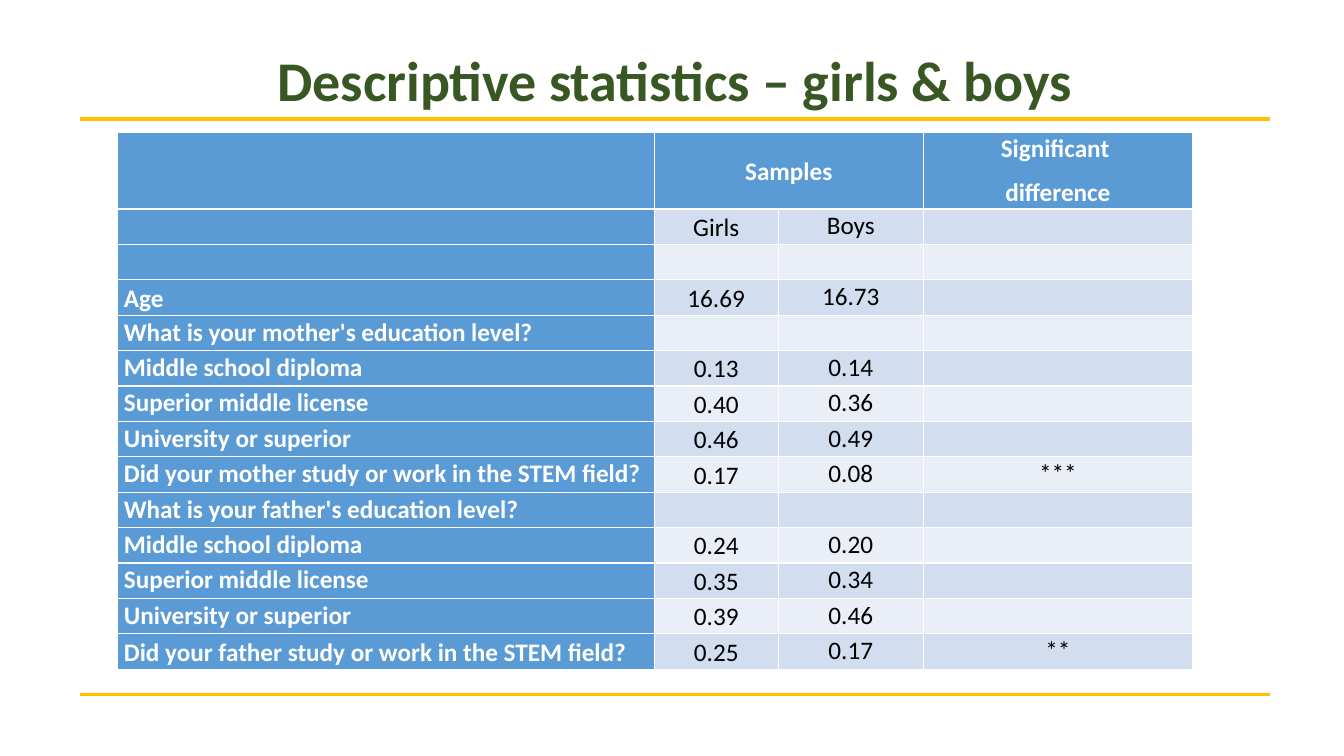
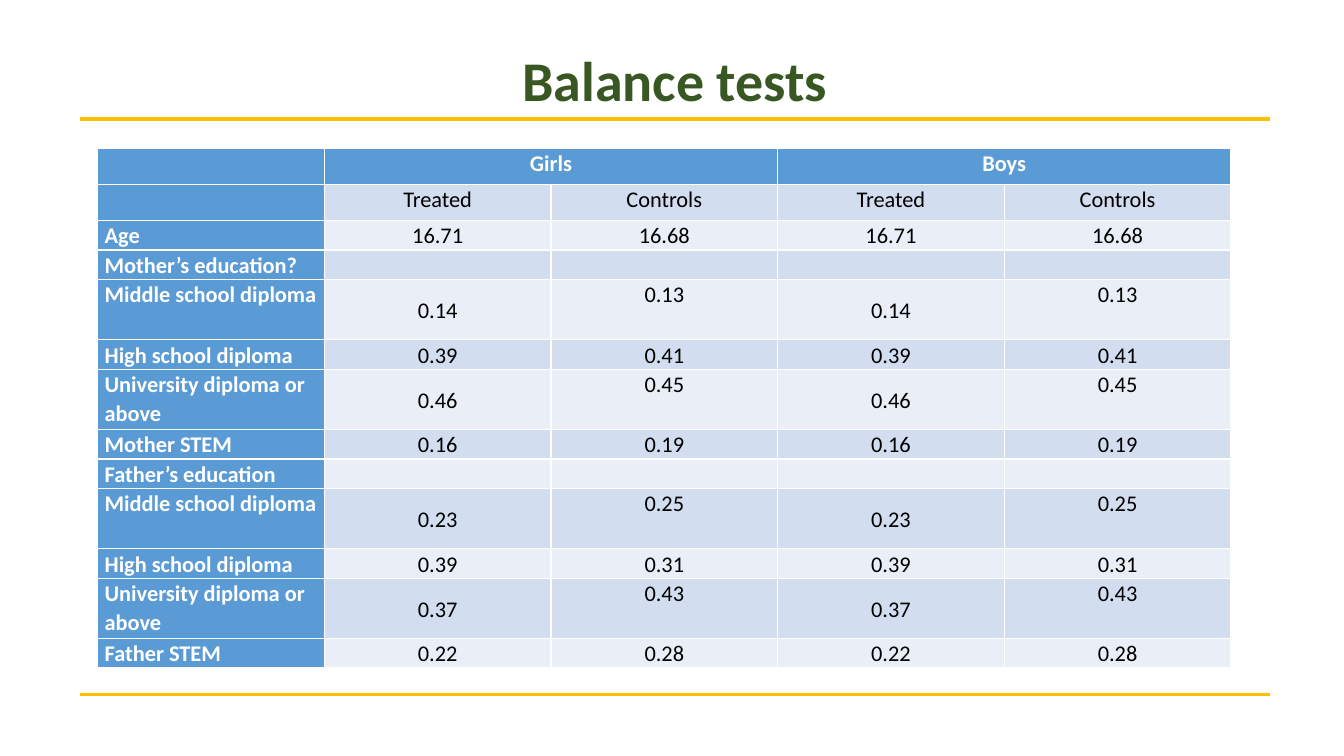
import pptx
import pptx.dml.color
import pptx.enum.shapes
import pptx.enum.text
import pptx.oxml.ns
import pptx.util
from lxml import etree

Pt = pptx.util.Pt
ALIGN = pptx.enum.text.PP_ALIGN
ANCHOR = pptx.enum.text.MSO_ANCHOR
qn = pptx.oxml.ns.qn

FONT = "Calibri"
HUES = {
    "title": "385723", "rule": "FFC000", "head": "5B9BD5",
    "odd": "D2DEEF", "even": "EAEFF7", "white": "FFFFFF", "black": "000000",
}
LEFT, RIGHT = 56.9, 907.2  # shared by title and rules


def rgb(name):
    return pptx.dml.color.RGBColor.from_string(HUES[name])


def style(para, size, hue, bold):
    para.font.name = FONT
    para.font.size = Pt(size)
    para.font.bold = bold
    para.font.color.rgb = rgb(hue)


# Text of the two tables
girls_boys = [
    ["", "Samples", "", "Significant \ndifference"],
    ["", "Girls", "Boys", ""],
    ["", "", "", ""],
    ["Age", "16.69", "16.73", ""],
    ["What is your mother's education level?", "", "", ""],
    ["Middle school diploma", "0.13", "0.14", ""],
    ["Superior middle license", "0.40", "0.36", ""],
    ["University or superior", "0.46", "0.49", ""],
    ["Did your mother study or work in the STEM field?", "0.17", "0.08", "***"],
    ["What is your father's education level?", "", "", ""],
    ["Middle school diploma", "0.24", "0.20", ""],
    ["Superior middle license", "0.35", "0.34", ""],
    ["University or superior", "0.39", "0.46", ""],
    ["Did your father study or work in the STEM field?", "0.25", "0.17", "**"],
]

# Each pair of values stands under Girls and again under Boys
pairs = [
    ("", "Treated", "Controls"),
    ("Age", "16.71", "16.68"),
    ("Mother’s education?", "", ""),
    ("Middle school diploma", "0.14", "0.13"),
    ("High school diploma", "0.39", "0.41"),
    ("University diploma or above", "0.46", "0.45"),
    ("Mother STEM", "0.16", "0.19"),
    ("Father’s education", "", ""),
    ("Middle school diploma", "0.23", "0.25"),
    ("High school diploma", "0.39", "0.31"),
    ("University diploma or above", "0.37", "0.43"),
    ("Father STEM", "0.22", "0.28"),
]
balance = [["", "Girls", "", "Boys", ""]]
balance += [[name, *pair, *pair] for name, *pair in pairs]
one, two = 21, 43.2  # heights of rows with one and two lines

# "mid" gives the columns centred vertically, from row "start" down
pages = [
    {"title": "Descriptive statistics – girls & boys", "rows": girls_boys,
     "left": 83.5, "top": 94.3, "cols": [383.8, 88.6, 103.7, 192.2],
     "heights": [55] + [25.3] * 13, "spans": [1], "mid": [1], "start": 0,
     "size": 18, "space": 1.06, "after": 8},
    {"title": "Balance tests", "rows": balance,
     "left": 69.8, "top": 105.8, "cols": [161.9] * 5,
     "heights": [25.9] * 2 + [one, one, two, one, two, one] + [one, two, one, two, one],
     "spans": [1, 3], "mid": [1, 3], "start": 2,
     "size": 16, "space": 1.07, "after": 0},
]

deck = pptx.Presentation()
deck.slide_width, deck.slide_height = Pt(960), Pt(540)

for page in pages:
    slide = deck.slides.add_slide(deck.slide_layouts[6])

    # Title
    box = slide.shapes.add_textbox(Pt(LEFT), Pt(37.8), Pt(RIGHT - LEFT), Pt(44))
    frame = box.text_frame
    frame.word_wrap = True
    frame.vertical_anchor = ANCHOR.MIDDLE
    frame.margin_top = frame.margin_bottom = 0
    frame.text = page["title"]
    para = frame.paragraphs[0]
    para.alignment = ALIGN.CENTER
    para.line_spacing = 0.9
    style(para, 40, "title", True)

    # Rules above and below the table
    for y in (85, 496.1):
        rule = slide.shapes.add_connector(
            pptx.enum.shapes.MSO_CONNECTOR.STRAIGHT, Pt(LEFT), Pt(y), Pt(RIGHT), Pt(y))
        rule.line.color.rgb = rgb("rule")
        rule.line.width = Pt(2.25)
        etree.SubElement(rule._element.spPr, qn("a:effectLst"))

    # Table grid; the default table style draws the white borders
    rows, cols = page["rows"], page["cols"]
    grid = slide.shapes.add_table(
        len(rows), len(cols), Pt(page["left"]), Pt(page["top"]),
        Pt(sum(cols)), Pt(sum(page["heights"]))).table
    grid.first_col = True
    for col, width in zip(grid.columns, cols):
        col.width = Pt(width)
    for row, height in zip(grid.rows, page["heights"]):
        row.height = Pt(height)
    for c in page["spans"]:
        grid.cell(0, c).merge(grid.cell(0, c + 1))

    # Cells
    for r, row in enumerate(rows):
        for c, text in enumerate(row):
            cell = grid.cell(r, c)
            head = r == 0 or c == 0
            cell.fill.solid()
            cell.fill.fore_color.rgb = rgb("head" if head else "odd" if r % 2 else "even")
            cell.margin_left = cell.margin_right = Pt(5)
            cell.margin_top = cell.margin_bottom = 0
            if c == 0:
                mid = text == "Age" or r == len(rows) - 1
            else:
                mid = c in page["mid"] and r >= page["start"]
            cell.vertical_anchor = ANCHOR.MIDDLE if mid else ANCHOR.TOP
            cell.text_frame.text = text
            for para in cell.text_frame.paragraphs:
                para.alignment = ALIGN.CENTER if c else ALIGN.LEFT
                para.line_spacing = page["space"]
                para.space_after = Pt(page["after"])
                style(para, page["size"], "white" if head else "black", head)
                if not text:  # keeps empty rows at their height
                    etree.SubElement(para._p, qn("a:endParaRPr"), sz=str(page["size"] * 100))

deck.save("out.pptx")
